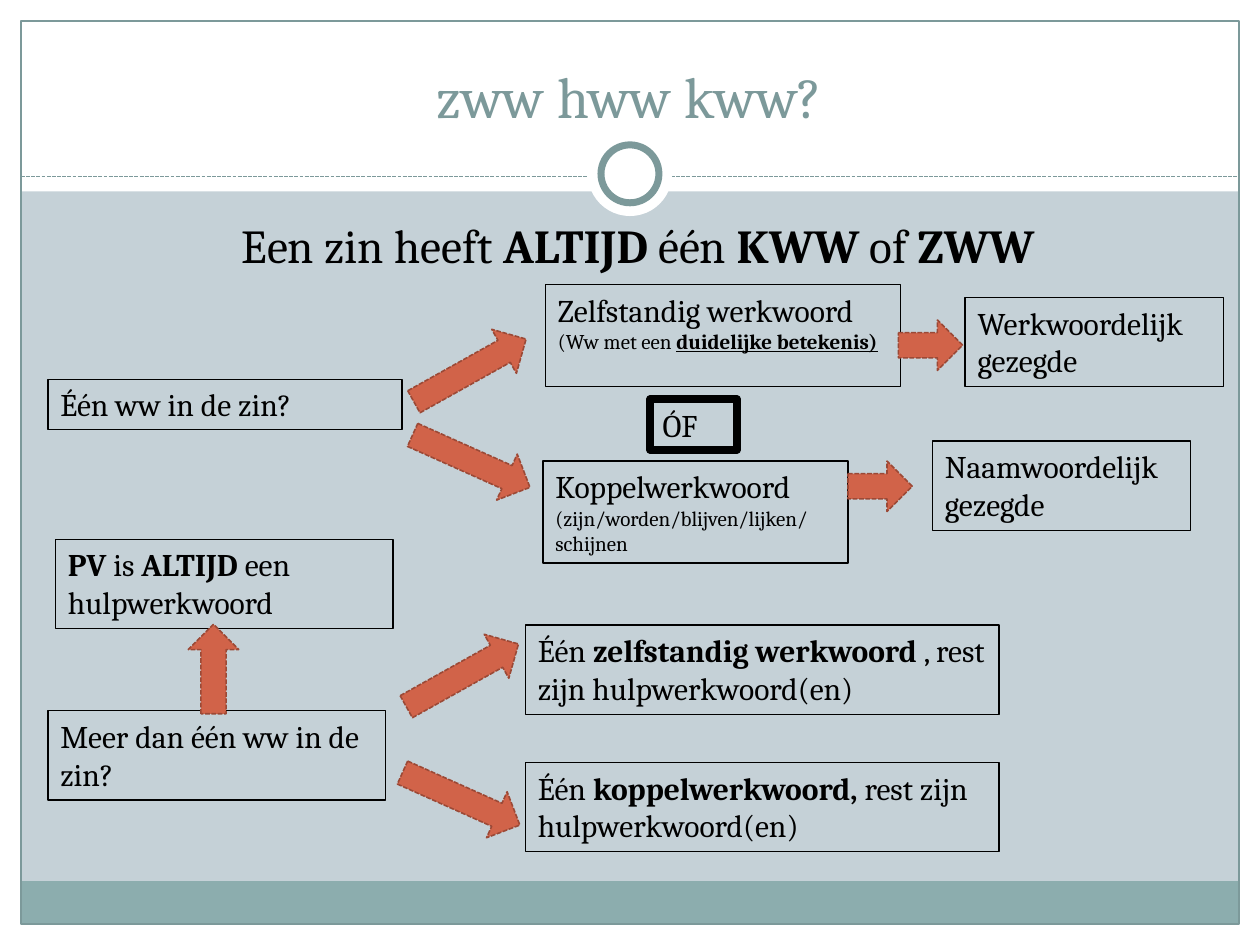
from lxml import etree
from pptx import Presentation
from pptx import util as u
from pptx.dml.color import RGBColor
from pptx.enum import dml, shapes, text
from pptx.oxml.ns import qn

W, H = 10, 7.5
EDGE = W / 60
BAND = 0.34
FONT = "Cambria"
BLACK = RGBColor(0, 0, 0)
WHITE = RGBColor(0xFF, 0xFF, 0xFF)
BACK = RGBColor(0xC5, 0xD1, 0xD7)
SAGE = RGBColor(0x7C, 0x99, 0x9A)
TEAL = RGBColor(0x8C, 0xAD, 0xAE)
RUST = RGBColor(0xD1, 0x63, 0x49)
DARK_RUST = RGBColor(0x9B, 0x49, 0x36)

SHAPE = shapes.MSO_SHAPE
DASH = dml.MSO_LINE.SQUARE_DOT
CENTER = text.PP_ALIGN.CENTER
BOLD = {"bold": True}
UNDERLINED = {"bold": True, "underline": True}
SMALL = 12

ARROW_W, ARROW_H = 1.02, 0.4
SHORT_W = ARROW_W / 2
UP, DOWN = -29.2, 24.1

# left, top, width, height, paragraphs of (size, runs)
ONE_LINE, TWO_LINES, THREE_LINES = 0.4, 0.71, 0.81
BOXES = [
    (0.38, 3.01, 2.81, ONE_LINE, [(18, ["Één ww in de zin?"])]),
    (4.33, 2.26, 2.82, THREE_LINES, [
        (18, ["Zelfstandig werkwoord"]),
        (SMALL, ["(Ww met een ", ("duidelijke betekenis)", UNDERLINED), " "])]),
    (4.31, 3.66, 2.42, THREE_LINES, [
        (18, ["Koppelwerkwoord"]),
        (SMALL, ["(zijn/worden/blijven/lijken/"]),
        (SMALL, ["schijnen"])]),
    (0.38, 5.64, 2.68, TWO_LINES, [(18, ["Meer dan één ww in de zin?"])]),
    (4.17, 4.96, 3.76, TWO_LINES, [
        (18, ["Één ", ("zelfstandig werkwoord ", BOLD),
              ", rest zijn hulpwerkwoord(en)"])]),
    (4.17, 6.05, 3.76, TWO_LINES, [
        (18, ["Één ", ("koppelwerkwoord, ", BOLD),
              "rest zijn hulpwerkwoord(en)"])]),
    (0.44, 4.28, 2.68, TWO_LINES, [
        (18, [("PV", BOLD), " is ", ("ALTIJD", BOLD), " een hulpwerkwoord"])]),
    (7.66, 2.36, 2.05, TWO_LINES, [(18, ["Werkwoordelijk gezegde"])]),
    (7.4, 3.5, 2.05, TWO_LINES, [(18, ["Naamwoordelijk gezegde"])]),
]

# left, top, length, rotation
ARROWS = [
    (3.22, 2.74, ARROW_W, UP),
    (3.23, 3.46, ARROW_W, DOWN),
    (3.16, 5.16, ARROW_W, UP),
    (3.15, 6.14, ARROW_W, DOWN),
    (1.34, 5.11, 0.71, -90),
    (7.13, 2.54, SHORT_W, 0),
    (6.73, 3.66, SHORT_W, 0),
]


def inches(*lengths):
    return [u.Inches(n) for n in lengths]


def set_line(line, color, width, dash=None):
    line.color.rgb = color
    line.width = u.Pt(width)
    if dash:
        line.dash_style = dash


def add_runs(p, size, runs, color=BLACK):
    """Add runs given as plain strings or (string, font values) pairs."""
    for run in runs:
        content, extra = (run, {}) if isinstance(run, str) else run
        r = p.add_run()
        r.text = content
        for name, value in {"name": FONT, "size": u.Pt(size), **extra}.items():
            setattr(r.font, name, value)
        r.font.color.rgb = color


def add_preset(s, kind, at, fill=None, line=None, rotation=0):
    sp = s.shapes.add_shape(kind, *inches(*at))
    sp.shadow.inherit = False
    sp.rotation = rotation
    if fill is None:
        sp.fill.background()
    else:
        sp.fill.solid()
        sp.fill.fore_color.rgb = fill
    if line:
        set_line(sp.line, *line)
    else:
        sp.line.fill.background()
    return sp


def add_text(s, at, paragraphs, line_width=None):
    sp = s.shapes.add_textbox(*inches(*at))
    tf = sp.text_frame
    tf.word_wrap = True
    for i, (size, runs) in enumerate(paragraphs):
        add_runs(tf.add_paragraph() if i else tf.paragraphs[0], size, runs)
    if line_width:
        set_line(sp.line, BLACK, line_width)
    return sp


def add_circle(s, diameter, **look):
    add_preset(s, SHAPE.OVAL,
               (W / 2 - diameter / 2, 1.38 - diameter / 2, diameter, diameter),
               **look)


def add_backdrop(s):
    s.background.fill.solid()
    s.background.fill.fore_color.rgb = BACK
    for at in [(0, H - EDGE, W, EDGE), (0, 0, W, 1.52),
               (0, 0, EDGE, H), (W - EDGE, 0, EDGE, H)]:
        add_preset(s, SHAPE.RECTANGLE, at, WHITE)
    inner = W - 2 * EDGE
    add_preset(s, SHAPE.RECTANGLE, (EDGE, H - EDGE - BAND, inner, BAND), TEAL)
    add_preset(s, SHAPE.RECTANGLE, (EDGE, EDGE, inner, H - 2 * EDGE),
               line=(SAGE, 0.75))
    rule = s.shapes.add_connector(shapes.MSO_CONNECTOR.STRAIGHT,
                                  *inches(EDGE, 1.4, W - EDGE, 1.4))
    set_line(rule.line, SAGE, 0.75, DASH)
    etree.SubElement(rule.element.spPr, qn("a:effectLst"))
    add_circle(s, 0.67, fill=WHITE)
    add_circle(s, 0.46, fill=WHITE, line=(SAGE, 4))


def set_title(s, words):
    sp = s.shapes.title
    sp.left, sp.top, sp.width, sp.height = inches(0.33, 0.25, 9.33, 0.83)
    s.shapes.element.append(sp.element)  # in front of the backdrop
    tf = sp.text_frame
    tf.vertical_anchor = text.MSO_ANCHOR.BOTTOM
    p = tf.paragraphs[0]
    p.alignment = CENTER
    add_runs(p, 33, [words], SAGE)


def main():
    prs = Presentation()
    prs.slide_width, prs.slide_height = inches(W, H)
    s = prs.slides.add_slide(prs.slide_layouts[5])
    add_backdrop(s)
    set_title(s, "zww hww kww?")

    rule = add_text(s, (0.33, 1.67, 9.47, 0.6), [
        (27, ["Een zin heeft ", ("ALTIJD ", BOLD), "één ", ("KWW ", BOLD),
              "of ", ("ZWW", BOLD)])])
    p = rule.text_frame.paragraphs[0]
    p.alignment = CENTER
    p.space_before = u.Pt(5.4)

    for *at, paragraphs in BOXES:
        add_text(s, at, paragraphs, 0.75)
    add_text(s, (5.16, 3.17, 0.69, ONE_LINE), [(18, ["ÓF"])], 4.5)
    for left, top, length, rotation in ARROWS:
        add_preset(s, SHAPE.RIGHT_ARROW, (left, top, length, ARROW_H),
                   RUST, (DARK_RUST, 0.9, DASH), rotation)
    prs.save("out.pptx")


if __name__ == "__main__":
    main()
